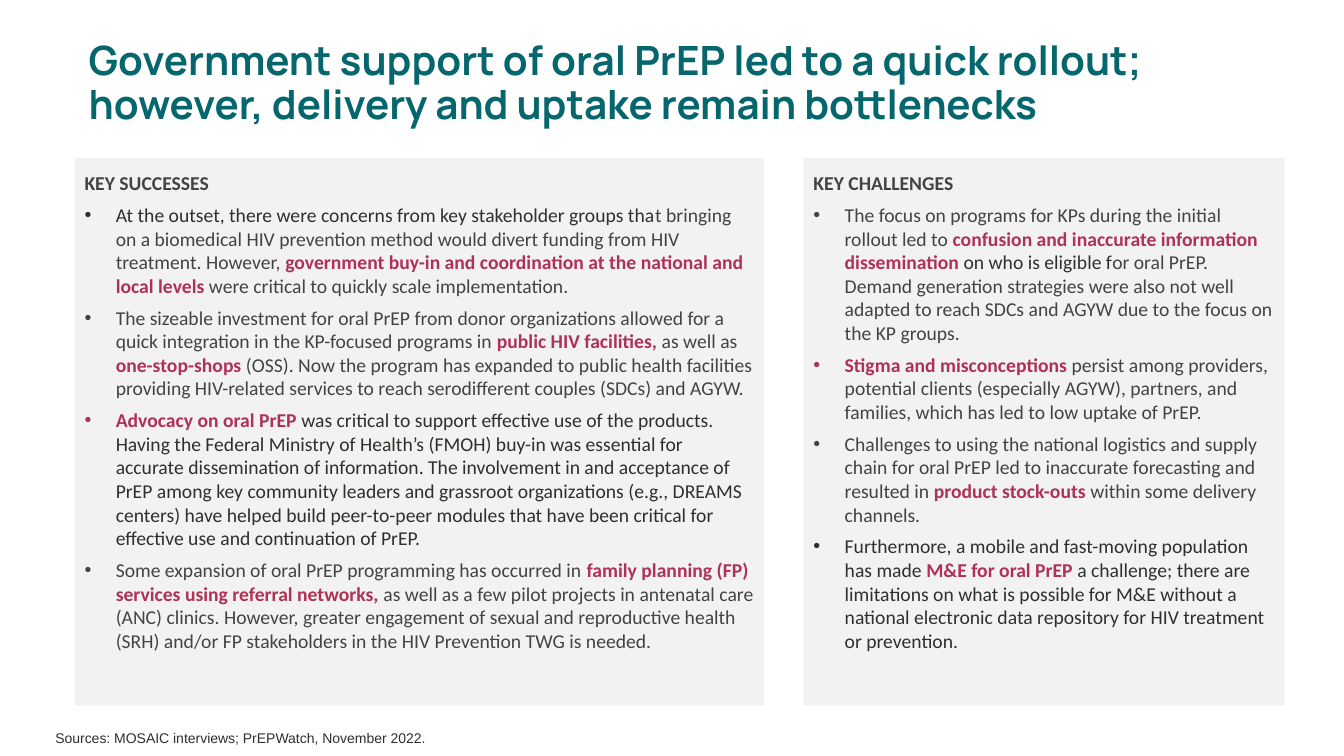
from lxml.etree import SubElement
from pptx import Presentation
from pptx.dml.color import RGBColor
from pptx.enum.shapes import MSO_SHAPE as Shape
from pptx.enum.text import MSO_ANCHOR as Anchor, MSO_AUTO_SIZE as Fit, PP_ALIGN as Align
from pptx.oxml.ns import qn
from pptx.util import Inches, Pt

INK = "312F2C"
GREY = "434343"
ROSE = "AF3158"
TEAL = "05676D"
PANEL = "F2F2F2"


def colour(code):
    return RGBColor.from_string(code)


def write(para, text, size=14, font="Calibri", tone=GREY, bold=False):
    span = para.add_run()
    span.text = text
    span.font.size = Pt(size)
    span.font.name = font
    span.font.bold = bold
    span.font.color.rgb = colour(tone)


successes = [
    [("At the outset, there were concerns from key stakeholder groups tha", INK),
     ("t bringing on a biomedical HIV prevention method would divert funding from HIV treatment. However, ", GREY),
     ("government buy-in and coordination at the national and local levels ", ROSE),
     ("were critical to quickly scale implementation. ", GREY)],
    [("The sizeable investment for oral PrEP from donor organizations allowed for a quick integration in the KP-focused programs in ", GREY),
     ("public HIV facilities, ", ROSE),
     ("as well as ", GREY),
     ("one-stop-shops", ROSE),
     (" (OSS). Now the program has expanded to public health facilities providing HIV-related services to reach serodifferent couples (SDCs) and AGYW.", GREY)],
    [("Advocacy on oral PrEP ", ROSE),
     ("was critical to support effective use of the products. Having the Federal Ministry of Health’s (FMOH) buy-in was essential for accurate dissemination of information. The involvement in and acceptance of PrEP among key community leaders and grassroot organizations (e.g., DREAMS centers) have helped build peer-to-peer modules that have been critical for effective use and continuation of PrEP.", INK)],
    [("Some expansion of oral PrEP programming has occurred in ", GREY),
     ("family planning (FP) services using referral networks, ", ROSE),
     ("as well as a few pilot projects in antenatal care (ANC) clinics. However, greater engagement of sexual and reproductive health (SRH) and/or FP stakeholders in the HIV Prevention TWG is needed.", GREY)],
]
challenges = [
    [("The focus on programs for KPs during the initial rollout led to ", GREY),
     ("confusion and inaccurate information dissemination ", ROSE),
     ("on who is eligible f", INK),
     ("or oral PrEP. Demand generation strategies were also not well adapted to reach SDCs and AGYW due to the focus on the KP groups.", GREY)],
    [("Stigma and misconceptions ", ROSE),
     ("persist among providers, potential clients (especially AGYW), partners, and families, which has led to low uptake of PrEP.", GREY)],
    [("Challenges to using the national logistics and supply chain for oral PrEP led to inaccurate forecasting and resulted in ", GREY),
     ("product stock-outs", ROSE),
     (" within some delivery channels.", GREY)],
    [("Furthermore, a mobile and fast-moving population has made ", INK),
     ("M&E for oral PrEP ", ROSE),
     ("a challenge; there are limitations on what is possible for M&E without a national electronic data repository for HIV treatment or prevention.", INK)],
]

deck = Presentation()
deck.slide_width = Inches(13.33)
deck.slide_height = Inches(7.5)
column = deck.slide_width / 100
row = deck.slide_height / 100
page = deck.slides.add_slide(deck.slide_layouts[5])

title = page.shapes.title
title.left, title.top = 0, int(2.8 * row)
title.width, title.height = int(95.5 * column), int(16.67 * row)
frame = title.text_frame
frame.auto_size = Fit.NONE
frame.word_wrap = True
frame.vertical_anchor = Anchor.MIDDLE
frame.margin_left = int(6.6 * column)
para = frame.paragraphs[0]
para.alignment = Align.LEFT
para.line_spacing = 0.9
write(para, "Government support of oral PrEP led to a quick rollout; however, delivery and uptake remain bottlenecks",
      size=28.8, font="Manrope", tone=TEAL, bold=True)

for heading, points, start, span_columns in [
    ("KEY SUCCESSES", successes, 5.55, 51.31),
    ("KEY CHALLENGES", challenges, 59.79, 35.78),
]:
    left, width = int(start * column), int(span_columns * column)
    panel = page.shapes.add_shape(Shape.RECTANGLE, left, int(20.93 * row), width, int(72.4 * row))
    panel.shadow.inherit = False
    panel.fill.solid()
    panel.fill.fore_color.rgb = colour(PANEL)
    panel.line.fill.background()

    box = page.shapes.add_textbox(left, int(22 * row), width, int(65.47 * row))
    frame = box.text_frame
    frame.word_wrap = True
    frame.auto_size = Fit.SHAPE_TO_FIT_TEXT
    para = frame.paragraphs[0]
    para.space_after = Pt(6)
    write(para, heading, bold=True)
    for point in points:
        para = frame.add_paragraph()
        para.space_after = Pt(6)
        layout = para._p.get_or_add_pPr()
        indent = Inches(0.31)
        layout.set("marL", str(indent))
        layout.set("indent", str(-indent))
        SubElement(layout, qn("a:buFont")).set("typeface", "Arial")
        SubElement(layout, qn("a:buChar")).set("char", "•")
        for text, tone in point:
            write(para, text, tone=tone, bold=tone == ROSE)

box = page.shapes.add_textbox(int(3.38 * column), int(95.33 * row), int(93.85 * column), int(4.67 * row))
frame = box.text_frame
frame.word_wrap = True
frame.margin_left = frame.margin_right = frame.margin_top = frame.margin_bottom = Inches(0.1)
write(frame.paragraphs[0], "Sources: MOSAIC interviews; PrEPWatch, November 2022.", size=10, font="Arial", tone=INK)

deck.save("out.pptx")
